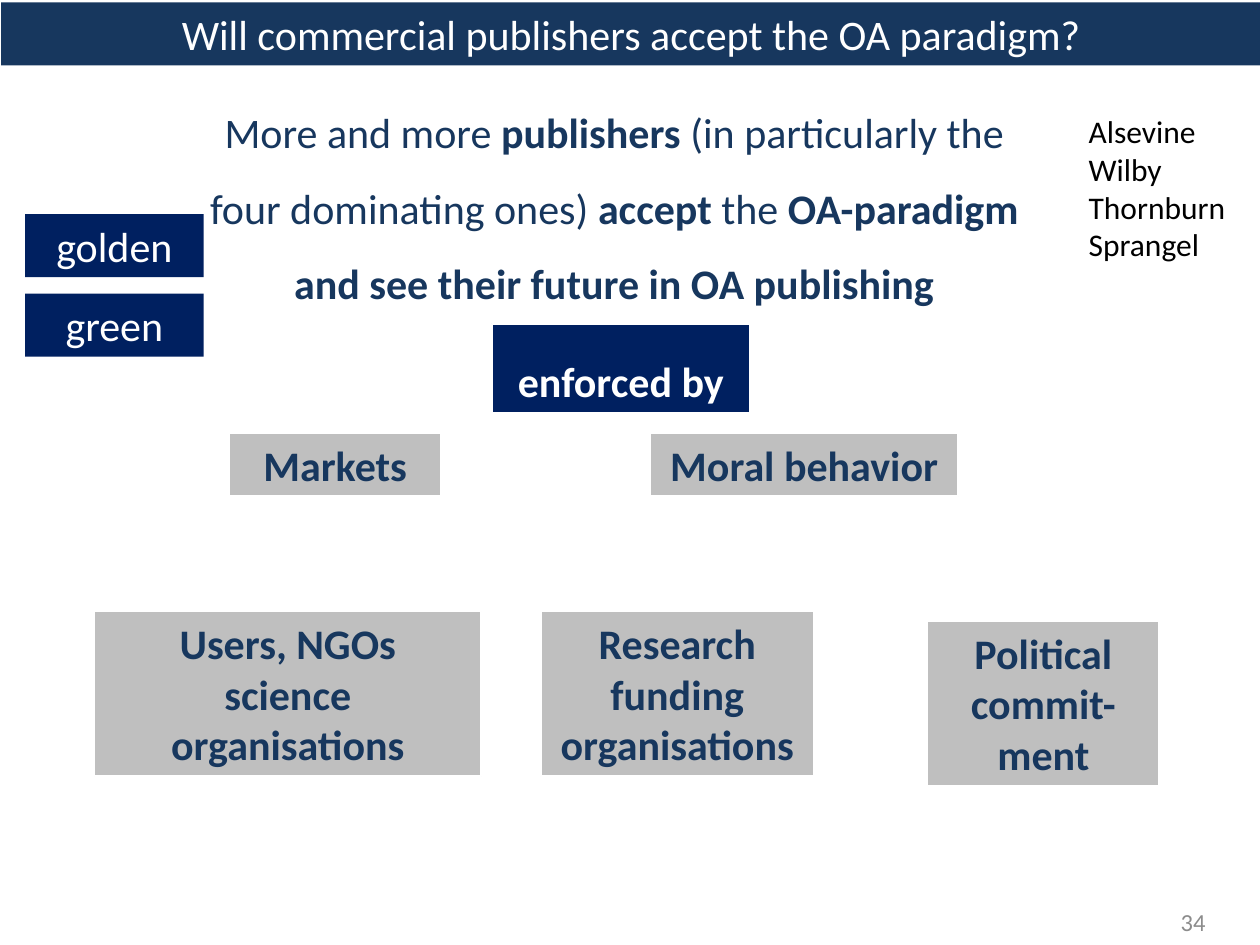
from pptx import Presentation
from pptx.dml.color import RGBColor
from pptx.enum.shapes import MSO_SHAPE
from pptx.enum.text import MSO_ANCHOR, MSO_AUTO_SIZE, PP_ALIGN
from pptx.util import Pt

NAVY, DARK, GREY, WHITE = "17375E", "002060", "BFBFBF", "FFFFFF"


def color(code):
    return RGBColor.from_string(code)


def write(shape, paras, size, ink, align=PP_ALIGN.CENTER, space=None):
    """Fill a shape with paragraphs, each a list of (text, bold) runs."""
    frame = shape.text_frame
    frame.word_wrap = True
    frame.auto_size = MSO_AUTO_SIZE.SHAPE_TO_FIT_TEXT
    frame.vertical_anchor = MSO_ANCHOR.TOP
    for i, runs in enumerate(paras):
        para = frame.paragraphs[0] if i == 0 else frame.add_paragraph()
        para.alignment = align
        para.line_spacing = space
        for text, bold in runs:
            run = para.add_run()
            run.text = text
            font = run.font
            font.name, font.size, font.bold = "Calibri", Pt(size), bold
            font.color.rgb = color(ink)


deck = Presentation()
deck.slide_width, deck.slide_height = Pt(720), Pt(540)
slide = deck.slides.add_slide(deck.slide_layouts[6])
shapes = slide.shapes
labels = shapes.add_group_shape()

claim = [
    ("More and more ", False),
    ("publishers", True),
    (" (in particularly the four dominating ones) ", False),
    ("accept", True),
    (" the ", False),
    ("OA-paradigm and see their future in OA publishing", True),
]
users = [[("Users, NGOs", True)], [("science organisations", True)]]

# parent, left, top, width, height, fill, outlined, ink, line spacing, paragraphs
boxes = [
    (shapes, 0.7, 1.4, 720, 36, NAVY, False, WHITE, None,
     [[("Will commercial publishers accept the OA paradigm?", False)]]),
    (shapes, 105, 43, 492, 138, WHITE, True, NAVY, 1.5, [claim]),
    (shapes, 54, 349.5, 221, 94, GREY, True, NAVY, None, users),
    (shapes, 309, 349.5, 156, 94, GREY, True, NAVY, None,
     [[("Research funding organisations", True)]]),
    (shapes, 530, 355, 132.5, 94, GREY, True, NAVY, None,
     [[("Political commit-ment", True)]]),
    (shapes, 131, 247.5, 121, 36, GREY, True, NAVY, None, [[("Markets", True)]]),
    (shapes, 371.5, 247.5, 176, 36, GREY, True, NAVY, None,
     [[("Moral behavior", True)]]),
    (shapes, 281, 185, 147.5, 51, DARK, True, WHITE, 1.5, [[("enforced by", True)]]),
    (labels.shapes, 14.4, 122.4, 102, 36, DARK, False, WHITE, None,
     [[("golden", False)]]),
    (labels.shapes, 14.4, 167.8, 102, 36, DARK, False, WHITE, None,
     [[("green", False)]]),
]
for parent, left, top, width, height, fill, edge, ink, space, paras in boxes:
    box = parent.add_shape(MSO_SHAPE.RECTANGLE, Pt(left), Pt(top), Pt(width), Pt(height))
    box.shadow.inherit = False
    box.fill.solid()
    box.fill.fore_color.rgb = color(fill)
    if edge:
        box.line.color.rgb = color(WHITE)
        box.line.width = Pt(1)
    else:
        box.line.fill.background()
    write(box, paras, 24, ink, space=space)

# The two label boxes overlap the claim, so their group goes to the front
tree = labels.element.getparent()
tree.append(labels.element)

names = shapes.add_textbox(Pt(615), Pt(60.5), Pt(105), Pt(94))
firms = ["Alsevine", "Wilby", "Thornburn", "Sprangel"]
write(names, [[(firm, False)] for firm in firms], 18, "000000", PP_ALIGN.LEFT)

number = shapes.add_textbox(Pt(528), Pt(512.5), Pt(168), Pt(28.8))
write(number, [[("34", False)]], 14, "8C8C8C", PP_ALIGN.RIGHT)
number.text_frame.auto_size = MSO_AUTO_SIZE.NONE
number.text_frame.vertical_anchor = MSO_ANCHOR.MIDDLE

deck.save("out.pptx")
